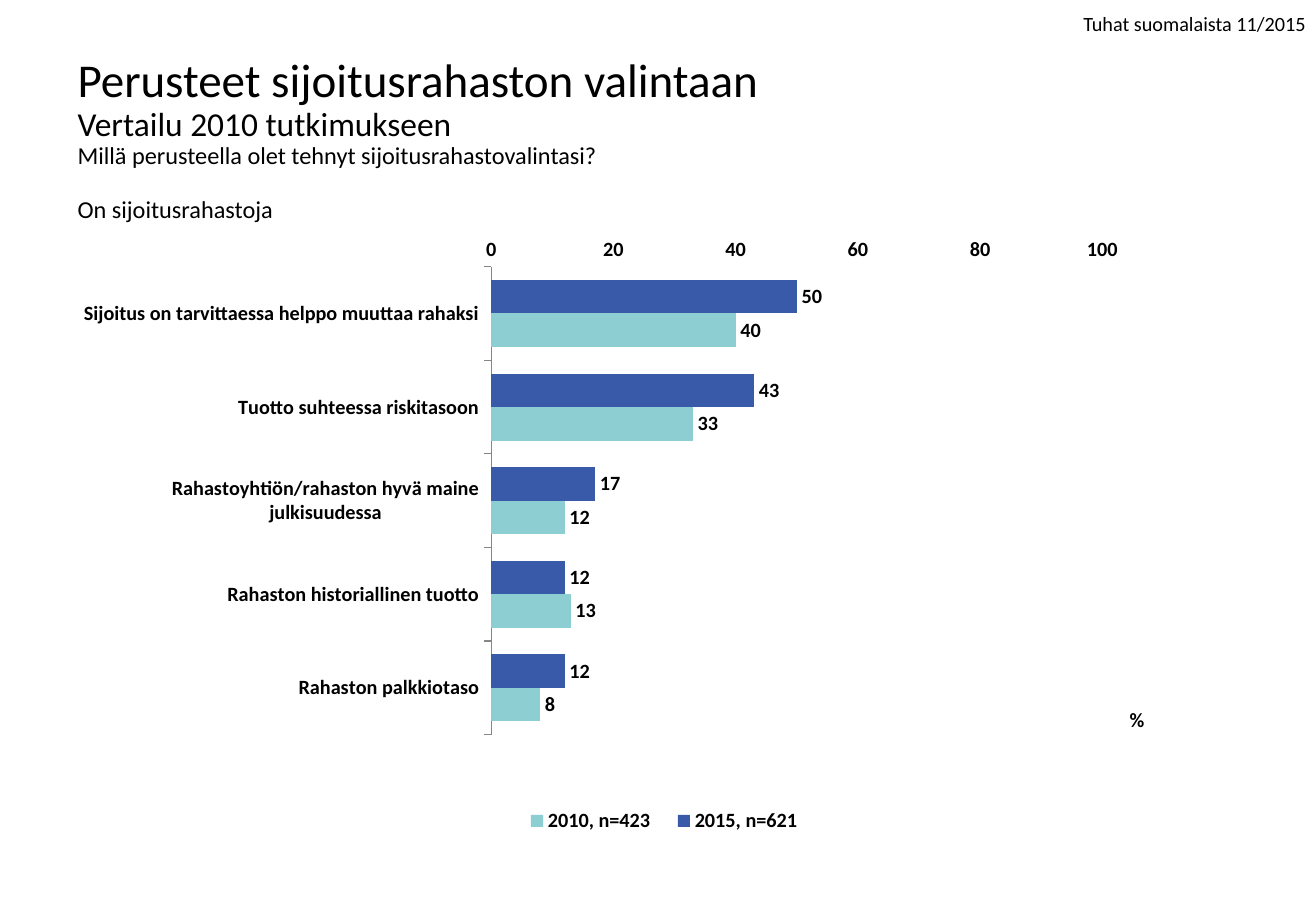
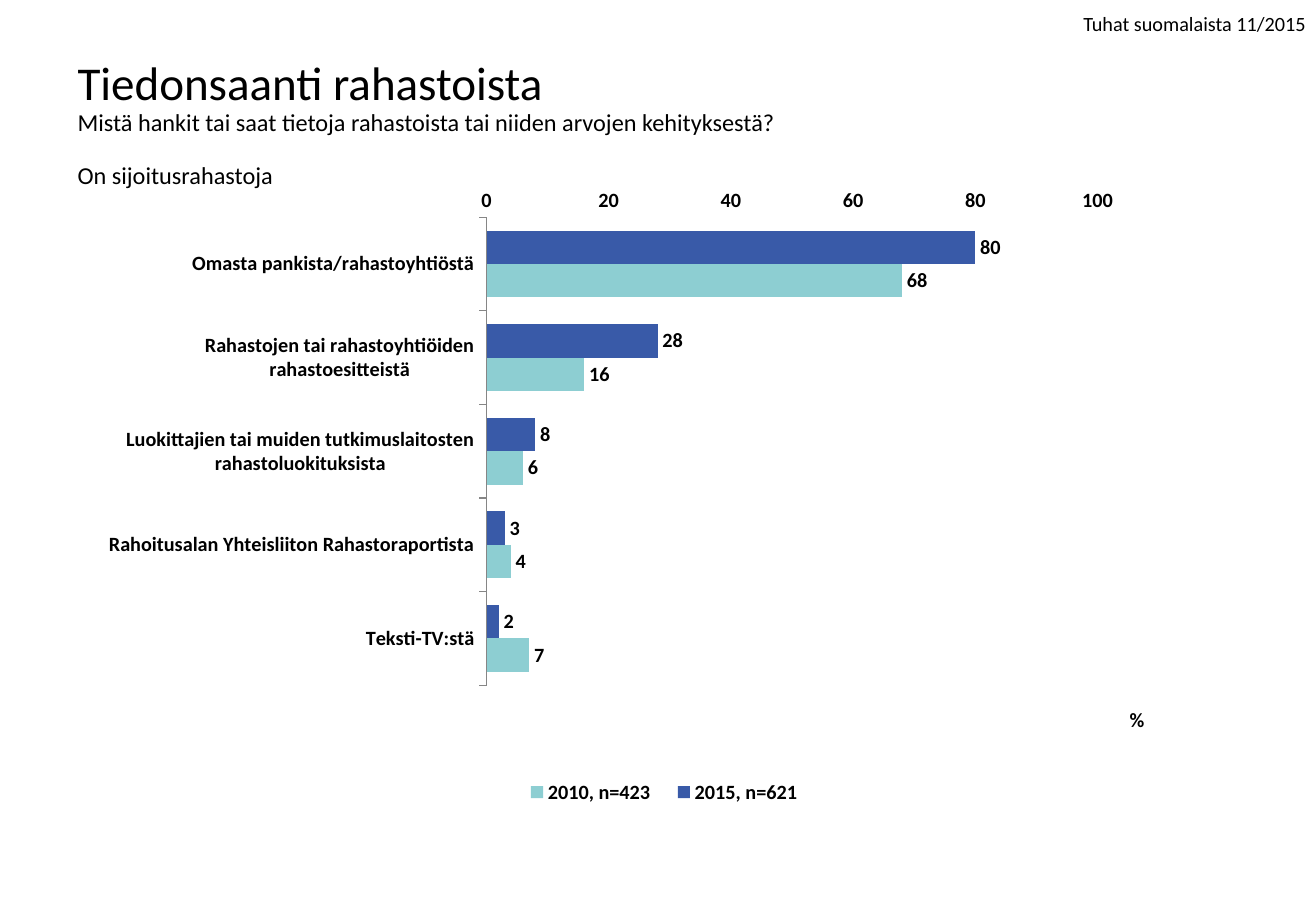
import pptx
import pptx.chart.data
import pptx.dml.color
import pptx.enum.chart
import pptx.enum.text
import pptx.oxml
import pptx.oxml.ns
import pptx.util
from lxml import etree

Pt = pptx.util.Pt
qn = pptx.oxml.ns.qn


class SurveyDeck:
    FONT = "Calibri"
    COLORS = {"text": "000000", "axis": "868686", "2015": "395AA8", "2010": "8DCED2"}
    SIZES = {"title": 27.9, "subtitle": 19.8, "question": 14.4, "base": 14.4}

    def __init__(self):
        self.deck = pptx.Presentation()
        self.deck.slide_width, self.deck.slide_height = Pt(780), Pt(540)
        self.slide = None

    def rgb(self, name):
        return pptx.dml.color.RGBColor.from_string(self.COLORS[name])

    def style(self, font, size, bold=False):
        font.name, font.size, font.bold = self.FONT, Pt(size), bold
        font.color.rgb = self.rgb("text")

    def text_frame(self, left, top, width, height, wrap=True):
        frame = self.slide.shapes.add_textbox(
            Pt(left), Pt(top), Pt(width), Pt(height)).text_frame
        frame.word_wrap = wrap
        return frame

    def new_slide(self):
        self.slide = self.deck.slides.add_slide(self.deck.slide_layouts[6])
        survey = self.text_frame(635, 3, 148, 21.6, wrap=False).paragraphs[0]
        survey.text = "Tuhat suomalaista 11/2015"
        self.style(survey.font, 12)

    def heading(self, bottom, lines):
        """Stack (role, text) lines upwards from the bottom edge."""
        frame = self.text_frame(38.9, bottom - 90, 741, 90)
        frame.vertical_anchor = pptx.enum.text.MSO_ANCHOR.BOTTOM
        for index, (role, text) in enumerate(lines):
            line = frame.paragraphs[0] if index == 0 else frame.add_paragraph()
            line.text = text
            line.line_spacing = 0.9
            if role == "base":
                line.space_before = Pt(16)
            self.style(line.font, self.SIZES[role])

    @staticmethod
    def place(part, index, x, y, w=None, h=None, inner=False):
        """Give a chart part a manual layout, in fractions of the chart."""
        for old in part.findall(qn("c:layout")):
            part.remove(old)
        layout = etree.Element(qn("c:layout"))
        manual = etree.SubElement(layout, qn("c:manualLayout"))
        settings = {"layoutTarget": "inner" if inner else None,
                    "xMode": "edge", "yMode": "edge",
                    "x": x, "y": y, "w": w, "h": h}
        for tag, value in settings.items():
            if value is not None:
                etree.SubElement(manual, qn("c:" + tag)).set("val", str(value))
        part.insert(index, layout)

    def bar_chart(self, categories, values, plot_at, legend_at):
        enums = pptx.enum.chart
        data = pptx.chart.data.CategoryChartData(number_format="0")
        data.categories = categories
        for (year, respondents), shares in values.items():
            data.add_series(f"{year}, n={respondents}", shares)
        chart = self.slide.shapes.add_chart(
            enums.XL_CHART_TYPE.BAR_CLUSTERED,
            Pt(49.7), Pt(105.8), Pt(702), Pt(425.5), data).chart
        chart.has_title = False
        self.style(chart.font, 12, bold=True)

        bars = chart.plots[0]
        bars.vary_by_categories = False
        bars.gap_width, bars.overlap = 80, 0
        bars.has_data_labels = True
        bars.data_labels.show_value = True
        bars.data_labels.position = enums.XL_LABEL_POSITION.OUTSIDE_END
        for (year, _), series in zip(values, bars.series):
            series.format.fill.solid()
            series.format.fill.fore_color.rgb = self.rgb(year)

        reasons = chart.category_axis
        reasons.reverse_order = True
        reasons.crosses = enums.XL_AXIS_CROSSES.MAXIMUM
        reasons.tick_label_position = enums.XL_TICK_LABEL_POSITION.LOW
        reasons.major_tick_mark = enums.XL_TICK_MARK.OUTSIDE
        reasons.format.line.color.rgb = self.rgb("axis")
        reasons.format.line.width = Pt(0.75)

        percent = chart.value_axis
        percent.minimum_scale, percent.maximum_scale = 0, 100
        percent.major_unit = 20
        percent.has_major_gridlines = False
        percent.major_tick_mark = enums.XL_TICK_MARK.NONE
        percent.format.line.fill.background()
        unit = percent.axis_title.text_frame.paragraphs[0]
        unit.text = "%"
        self.style(unit.font, 12, bold=True)
        self.place(percent.axis_title._element, 1, 0.88, 0.73)

        chart.has_legend = True
        chart.legend.position = enums.XL_LEGEND_POSITION.BOTTOM
        chart.legend.include_in_layout = False
        self.place(chart.legend._element, 1, *legend_at, 0.26, 0.05)
        self.place(chart._chartSpace.chart.plotArea, 0, *plot_at, 0.516, 0.652, inner=True)


def main():
    survey = SurveyDeck()
    years = [("2015", 621), ("2010", 423)]
    base = ("base", "On sijoitusrahastoja")

    survey.new_slide()
    survey.bar_chart(
        ["Sijoitus on tarvittaessa helppo muuttaa rahaksi",
         "Tuotto suhteessa riskitasoon",
         "Rahastoyhtiön/rahaston hyvä maine julkisuudessa",
         "Rahaston historiallinen tuotto",
         "Rahaston palkkiotaso"],
        dict(zip(years, [(50, 43, 17, 12, 12), (40, 33, 12, 13, 8)])),
        plot_at=(0.344, 0.123), legend_at=(0.36, 0.87))
    survey.heading(136, [
        ("title", "Perusteet sijoitusrahaston valintaan"),
        ("subtitle", "Vertailu 2010 tutkimukseen"),
        ("question", "Millä perusteella olet tehnyt sijoitusrahastovalintasi?"),
        base])

    survey.new_slide()
    survey.bar_chart(
        ["Omasta pankista/rahastoyhtiöstä",
         "Rahastojen tai rahastoyhtiöiden rahastoesitteistä",
         "Luokittajien tai muiden tutkimuslaitosten rahastoluokituksista",
         "Rahoitusalan Yhteisliiton Rahastoraportista",
         "Teksti-TV:stä"],
        dict(zip(years, [(80, 28, 8, 3, 2), (68, 16, 6, 4, 7)])),
        plot_at=(0.34, 0.054), legend_at=(0.36, 0.83))
    survey.heading(116, [
        ("title", "Tiedonsaanti rahastoista"),
        ("question", "Mistä hankit tai saat tietoja rahastoista tai niiden arvojen kehityksestä?"),
        base])

    survey.deck.save("out.pptx")


if __name__ == "__main__":
    main()
